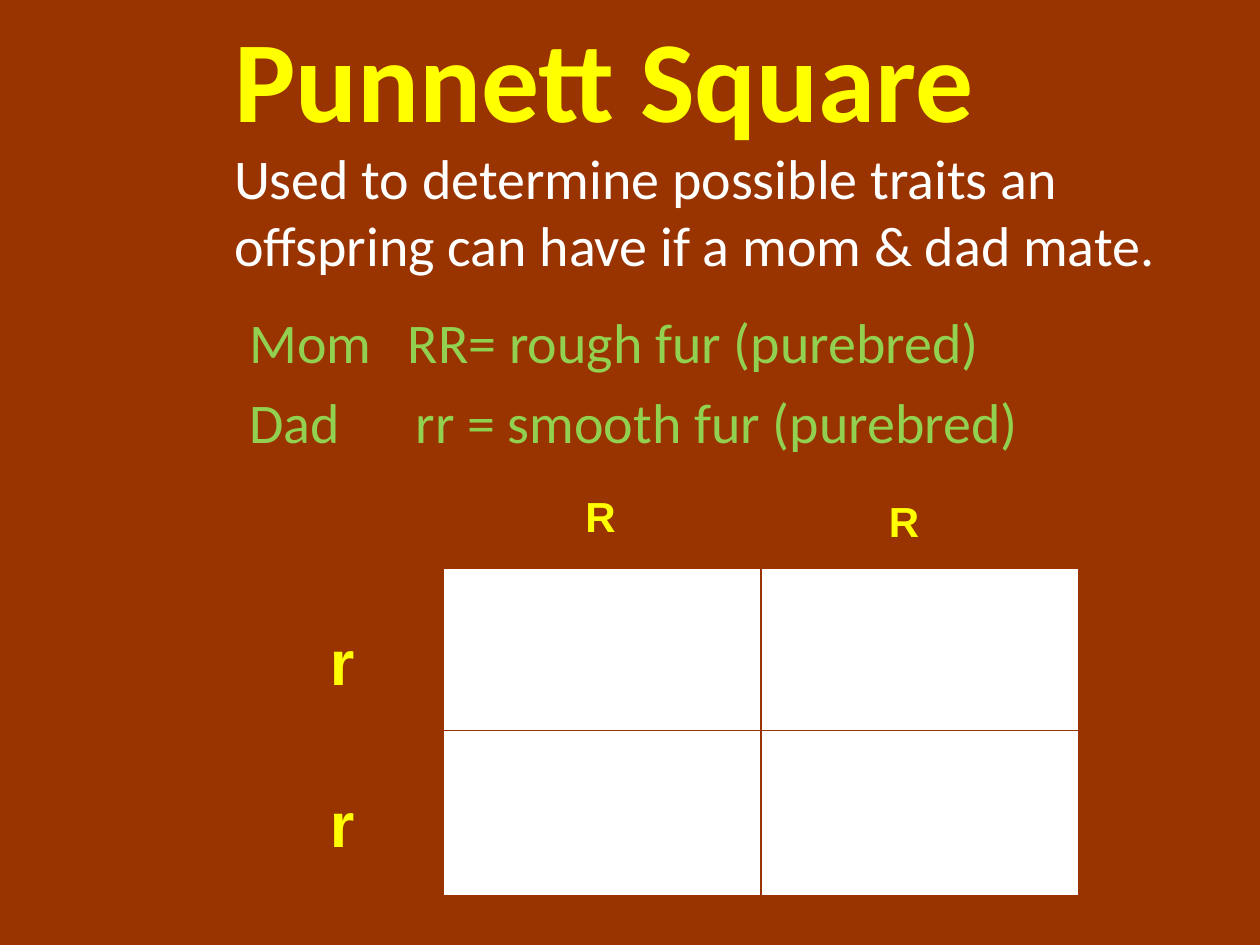
from lxml import etree
from pptx import Presentation
from pptx.dml.color import RGBColor
from pptx.enum import text
from pptx.oxml import ns
from pptx.util import Inches, Pt

RUST = RGBColor(0x99, 0x33, 0x00)
YELLOW = RGBColor(0xFF, 0xFF, 0x00)
WHITE = RGBColor(0xFF, 0xFF, 0xFF)
GREEN = RGBColor(0x92, 0xD0, 0x50)

HEADINGS = [
    ("Punnett Square", (1.76, 0.01, 7.75, 1.21), 66, YELLOW, True),
    ("Used to determine possible traits an offspring can have if a mom & dad mate.",
     (1.76, 1.09, 8.24, 1.18), 32, WHITE, False),
]
PARENTS = [
    ("Mom\tRR= rough fur (purebred)", 2.39, 1.26),
    ("Dad\trr = smooth fur (purebred)", 3.03, 1.32),
]
ALLELES = [
    ("R", (4.07, 3.84, 1.39, 0.5), 24),
    ("R", (6.48, 3.88, 1.39, 0.5), 24),
    ("r", (2.02, 4.89, 1.39, 0.71), 36),
    ("r", (2.02, 6.18, 1.39, 0.71), 36),
]
SQUARE_LEFT, SQUARE_TOP = 3.52, 4.51
COLUMN_WIDTHS = [2.52, 2.52]
ROW_HEIGHTS = [1.29, 1.31]


def add_text(slide, words, place, size, color, bold=False, font="Calibri",
             align=text.PP_ALIGN.LEFT, tab=None):
    frame = slide.shapes.add_textbox(*map(Inches, place)).text_frame
    frame.word_wrap = True
    paragraph = frame.paragraphs[0]
    paragraph.text = words
    paragraph.alignment = align
    if tab:
        stops = etree.SubElement(paragraph._p.get_or_add_pPr(), ns.qn("a:tabLst"))
        etree.SubElement(stops, ns.qn("a:tab"), pos=str(Inches(tab)), algn="l")
    paragraph.font.name = font
    paragraph.font.size = Pt(size)
    paragraph.font.bold = bold
    paragraph.font.color.rgb = color


def add_borders(cell):
    properties = cell._tc.get_or_add_tcPr()
    for position, side in enumerate(("lnL", "lnR", "lnT", "lnB")):
        line = etree.Element(ns.qn(f"a:{side}"), w=str(Pt(1)))
        fill = etree.SubElement(line, ns.qn("a:solidFill"))
        etree.SubElement(fill, ns.qn("a:srgbClr"), val=str(RUST))
        properties.insert(position, line)


def add_square(slide):
    square = slide.shapes.add_table(
        len(ROW_HEIGHTS), len(COLUMN_WIDTHS), Inches(SQUARE_LEFT), Inches(SQUARE_TOP),
        Inches(sum(COLUMN_WIDTHS)), Inches(sum(ROW_HEIGHTS))).table
    for column, width in zip(square.columns, COLUMN_WIDTHS):
        column.width = Inches(width)
    for row, height in zip(square.rows, ROW_HEIGHTS):
        row.height = Inches(height)
    for cell in square.iter_cells():
        cell.fill.solid()
        cell.fill.fore_color.rgb = WHITE
        add_borders(cell)


def main():
    deck = Presentation()
    deck.slide_width, deck.slide_height = Inches(10), Inches(7.5)
    slide = deck.slides.add_slide(deck.slide_layouts[6])
    slide.background.fill.solid()
    slide.background.fill.fore_color.rgb = RUST

    for words, place, size, color, bold in HEADINGS:
        add_text(slide, words, place, size, color, bold)
    add_square(slide)
    for words, top, tab in PARENTS:
        add_text(slide, words, (1.88, top, 6.8, 0.64), 32, GREEN, tab=tab)
    for letter, place, size in ALLELES:
        add_text(slide, letter, place, size, YELLOW, True, "Arial", text.PP_ALIGN.CENTER)

    deck.save("out.pptx")


if __name__ == "__main__":
    main()
